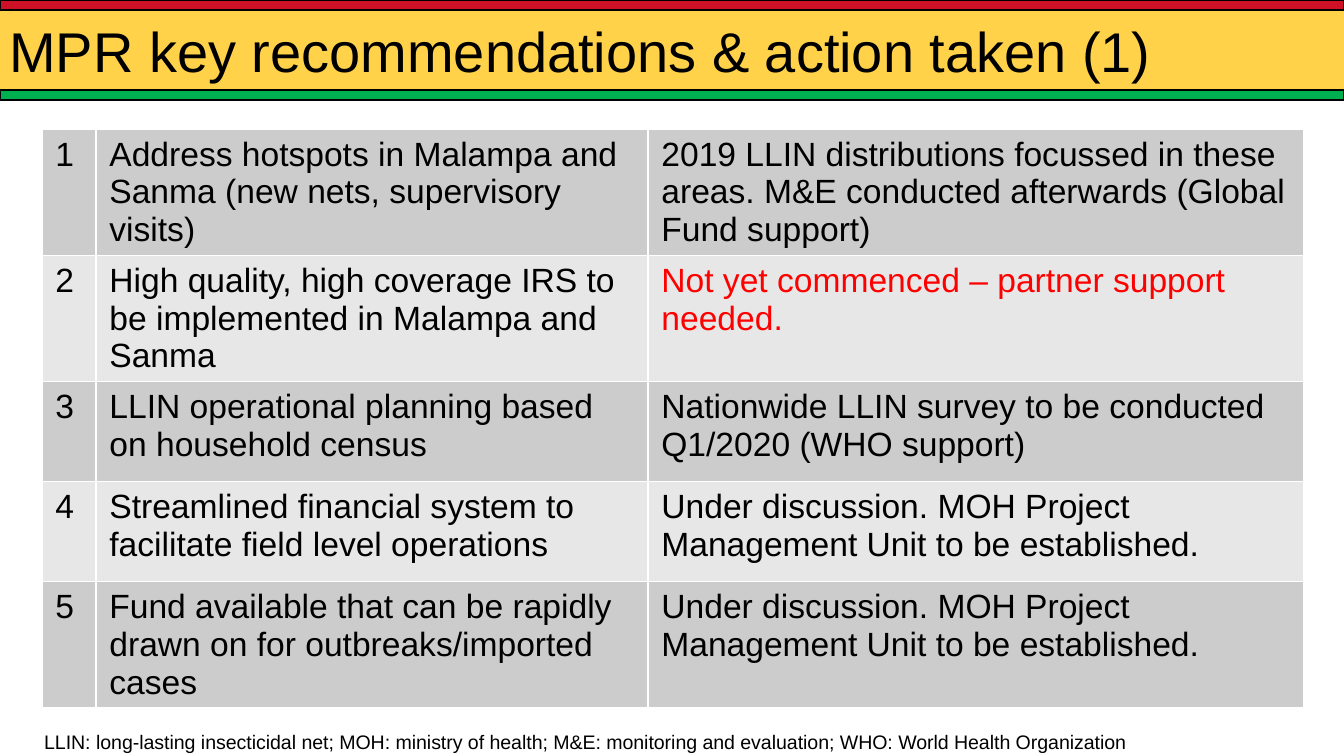
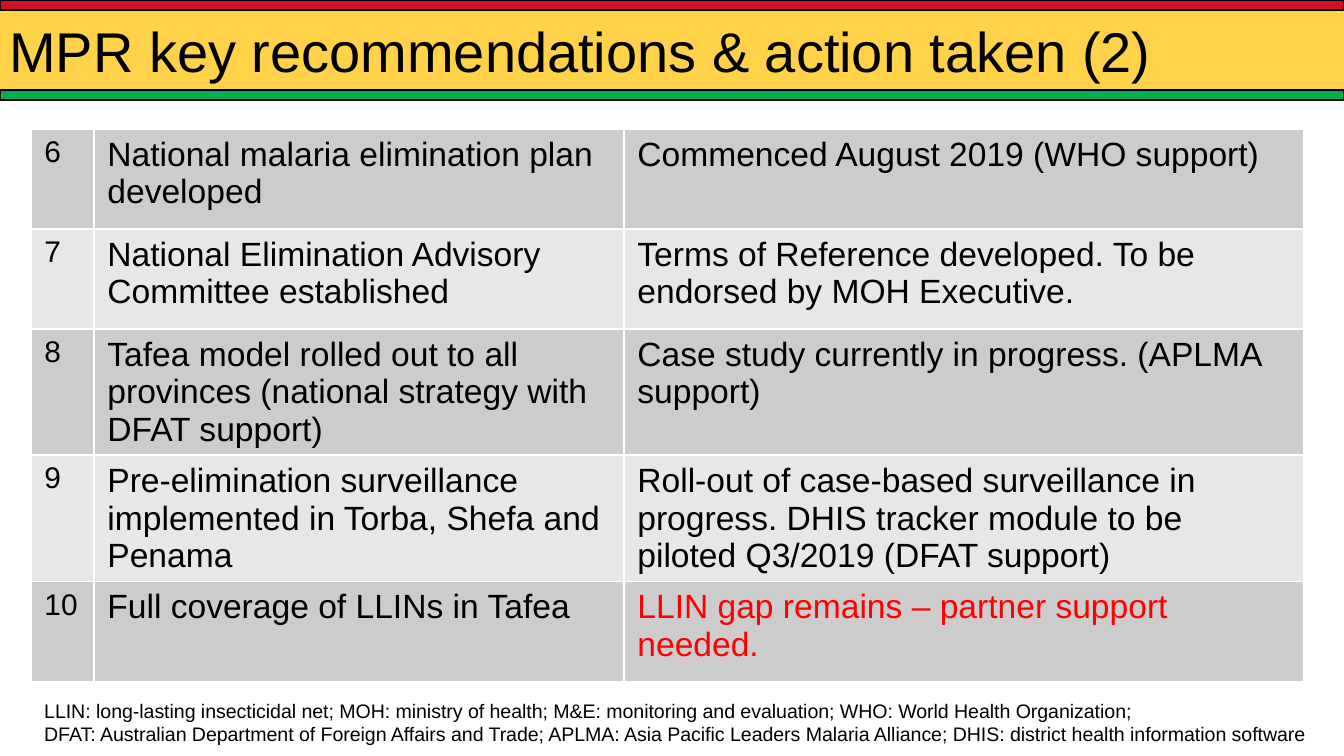
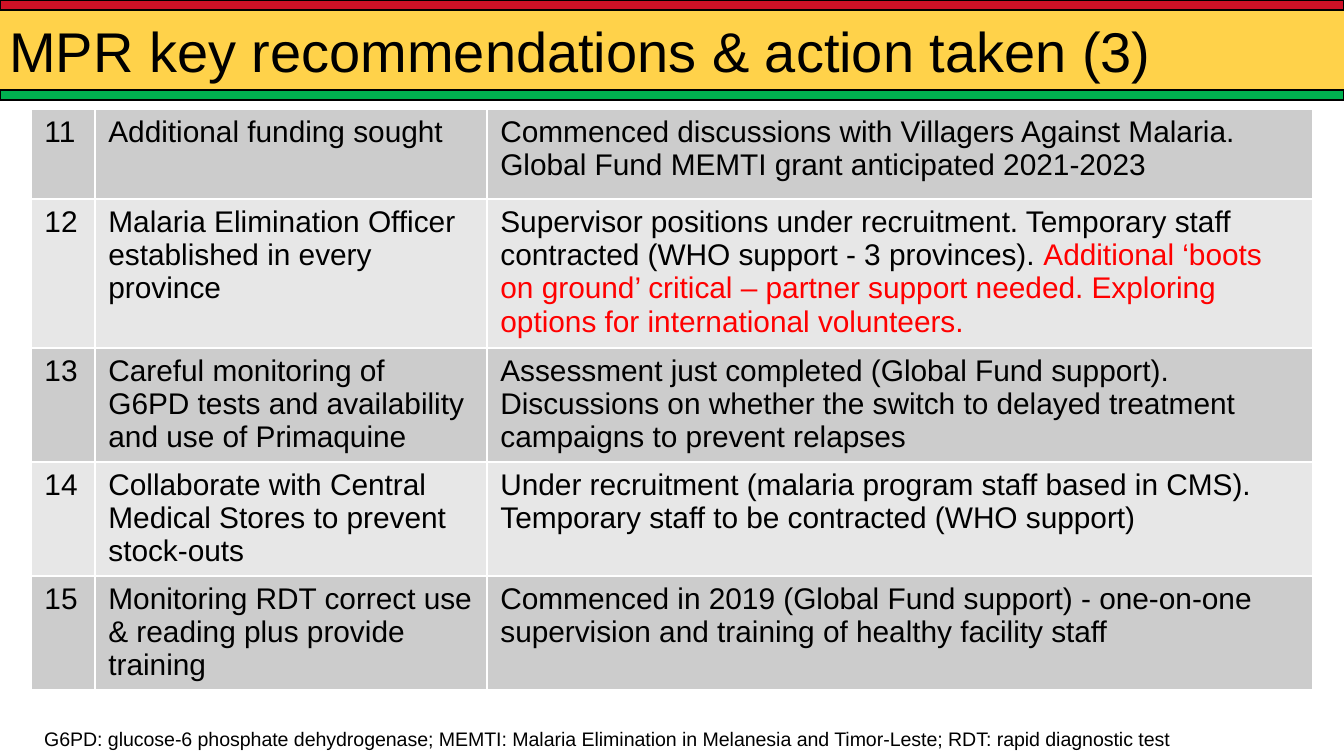
import pptx
import pptx.dml.color
import pptx.enum.shapes
import pptx.enum.text
import pptx.oxml.ns
import pptx.util
import lxml.etree

WIDE, HIGH, HEAD = 1344, 756, 100
FONT = "Arial"
HUES = {
    "gold": "FFC000", "green": "00B050", "red": "CE1126",
    "black": "000000", "alert": "FF0000",
    "dark": "CCCCCC", "light": "E7E7E7",
}
BANDS = [
    ("gold", (0, 0, WIDE, HEAD), 71),
    ("green", (0, 90, WIDE, 10), None),
    ("red", (0, 0, WIDE, 10), None),
]
TEXT = pptx.enum.text
FRAME = {
    "title": {
        "margin_left": pptx.util.Inches(0.07), "margin_right": pptx.util.Inches(0.07),
        "margin_top": pptx.util.Inches(0.04), "margin_bottom": pptx.util.Inches(0.04),
        "vertical_anchor": TEXT.MSO_ANCHOR.MIDDLE,
        "auto_size": TEXT.MSO_AUTO_SIZE.NONE, "word_wrap": True,
    },
    "note": {"word_wrap": False, "auto_size": TEXT.MSO_AUTO_SIZE.SHAPE_TO_FIT_TEXT},
}
PLAIN = {"first_row": False, "horz_banding": False}
NETS = ("LLIN: long-lasting insecticidal net; MOH: ministry of health; "
        "M&E: monitoring and evaluation; WHO: World Health Organization")
UNIT = "Under discussion. MOH Project Management Unit to be established."

PAGES = [
    {
        "box": (42, 129, 1261, 603), "cols": (54, 552, 656), "rows": [100] * 5,
        "sizes": (18, 18, 18), "foot": (31, 723, 1130, 38), "notes": [NETS],
        "items": [
            ("Address hotspots in Malampa and Sanma (new nets, supervisory visits)",
             "2019 LLIN distributions focussed in these areas. M&E conducted afterwards (Global Fund support)", ""),
            ("High quality, high coverage IRS to be implemented in Malampa and Sanma",
             "", "Not yet commenced – partner support needed."),
            ("LLIN operational planning based on household census",
             "Nationwide LLIN survey to be conducted Q1/2020 (WHO support)", ""),
            ("Streamlined financial system to facilitate field level operations", UNIT, ""),
            ("Fund available that can be rapidly drawn on for outbreaks/imported cases", UNIT, ""),
        ],
    },
    {
        "box": (31, 129, 1273, 569), "cols": (63, 530, 680), "rows": [100] * 5,
        "sizes": (16, 18, 18), "foot": (31, 692, 1312, 60),
        "notes": [
            NETS + ";",
            "DFAT: Australian Department of Foreign Affairs and Trade; APLMA: Asia Pacific Leaders "
            "Malaria Alliance; DHIS: district health information software",
        ],
        "items": [
            ("National malaria elimination plan developed",
             "Commenced August 2019 (WHO support)", ""),
            ("National Elimination Advisory Committee established",
             "Terms of Reference developed. To be endorsed by MOH Executive.", ""),
            ("Tafea model rolled out to all provinces (national strategy with DFAT support)",
             "Case study currently in progress. (APLMA support)", ""),
            ("Pre-elimination surveillance implemented in Torba, Shefa and Penama",
             "Roll-out of case-based surveillance in progress. DHIS tracker module to be piloted "
             "Q3/2019 (DFAT support)", ""),
            ("Full coverage of LLINs in Tafea",
             "", "LLIN gap remains – partner support needed."),
        ],
    },
    {
        "box": (31, 109, 1282, 610), "cols": (64, 392, 826), "rows": [90, 149, 114, 114, 114],
        "sizes": (16, 16, 16), "foot": (31, 720, 1173, 38),
        "notes": ["G6PD: glucose-6 phosphate dehydrogenase; MEMTI: Malaria Elimination in "
                  "Melanesia and Timor-Leste; RDT: rapid diagnostic test"],
        "items": [
            ("Additional funding sought",
             "Commenced discussions with Villagers Against Malaria. Global Fund MEMTI grant "
             "anticipated 2021-2023", ""),
            ("Malaria Elimination Officer established in every province",
             "Supervisor positions under recruitment. Temporary staff contracted (WHO support - 3 provinces). ",
             "Additional ‘boots on ground’ critical – partner support needed. Exploring options for "
             "international volunteers."),
            ("Careful monitoring of G6PD tests and availability and use of Primaquine",
             "Assessment just completed (Global Fund support). Discussions on whether the switch to "
             "delayed treatment campaigns to prevent relapses", ""),
            ("Collaborate with Central Medical Stores to prevent stock-outs",
             "Under recruitment (malaria program staff based in CMS). Temporary staff to be "
             "contracted (WHO support)", ""),
            ("Monitoring RDT correct use & reading plus provide training",
             "Commenced in 2019 (Global Fund support) - one-on-one supervision and training of "
             "healthy facility staff", ""),
        ],
    },
]


def px(num):
    return pptx.util.Emu(round(num * 914400 / 134.4))


def hue(name):
    return pptx.dml.color.RGBColor.from_string(HUES[name])


def style(thing, form):
    for key, val in form.items():
        setattr(thing, key, val)


def place(shape, box):
    style(shape, dict(zip(("left", "top", "width", "height"), map(px, box))))


def write(para, text, size, tint="black"):
    run = para.add_run()
    run.text = text
    style(run.font, {"name": FONT, "size": pptx.util.Pt(size)})
    run.font.color.rgb = hue(tint)


def paint(fill, name):
    fill.solid()
    fill.fore_color.rgb = hue(name)


def add_bands(slide, master):
    for spot, (name, box, alpha) in enumerate(BANDS):
        band = slide.shapes.add_shape(
            pptx.enum.shapes.MSO_SHAPE.RECTANGLE, *map(px, box))
        band.shadow.inherit = False
        paint(band.fill, name)
        if alpha:
            band.line.fill.background()
            qn = pptx.oxml.ns.qn
            tone = band.element.spPr.find(qn("a:solidFill")).find(qn("a:srgbClr"))
            lxml.etree.SubElement(tone, qn("a:alpha")).set("val", str(alpha * 1000))
        else:
            paint(band.line.fill, "black")
            band.line.width = pptx.util.Pt(0.75)
        band.element.nvSpPr.cNvPr.id = 50 + spot
        master.shapes.element.insert(2 + spot, band.element)


def add_title(slide, box, text):
    title = slide.shapes.title
    place(title, box)
    style(title.text_frame, FRAME["title"])
    para = title.text_frame.paragraphs[0]
    para.alignment = TEXT.PP_ALIGN.LEFT
    write(para, text, 30)


def add_grid(slide, page, first):
    items = page["items"]
    frame = slide.shapes.add_table(
        len(items), len(page["cols"]), *map(px, page["box"]))
    grid = frame.table
    style(grid, PLAIN)
    for col, wide in zip(grid.columns, page["cols"]):
        col.width = px(wide)
    for row, high in zip(grid.rows, page["rows"]):
        row.height = px(high)
    place(frame, page["box"])
    for spot, (goal, done, need) in enumerate(items):
        parts = ([(str(first + spot), "black")], [(goal, "black")],
                 [(done, "black"), (need, "alert")])
        for cell, runs, size in zip(grid.rows[spot].cells, parts, page["sizes"]):
            paint(cell.fill, ("dark", "light")[spot % 2])
            for text, tint in runs:
                if text:
                    write(cell.text_frame.paragraphs[0], text, size, tint)


def add_notes(slide, box, lines):
    note = slide.shapes.add_textbox(*map(px, box))
    frame = note.text_frame
    style(frame, FRAME["note"])
    for spot, line in enumerate(lines):
        para = frame.add_paragraph() if spot else frame.paragraphs[0]
        write(para, line, 10.5)


def main():
    deck = pptx.Presentation()
    style(deck, {"slide_width": px(WIDE), "slide_height": px(HIGH)})
    first = 1
    for num, page in enumerate(PAGES, 1):
        slide = deck.slides.add_slide(deck.slide_layouts.get_by_name("Title Only"))
        if num == 1:
            add_bands(slide, deck.slide_master)
        add_title(slide, (0, 0, 1340, HEAD), f"MPR key recommendations & action taken ({num})")
        add_grid(slide, page, first)
        add_notes(slide, page["foot"], page["notes"])
        first += len(page["items"])
    deck.save("out.pptx")


if __name__ == "__main__":
    main()
